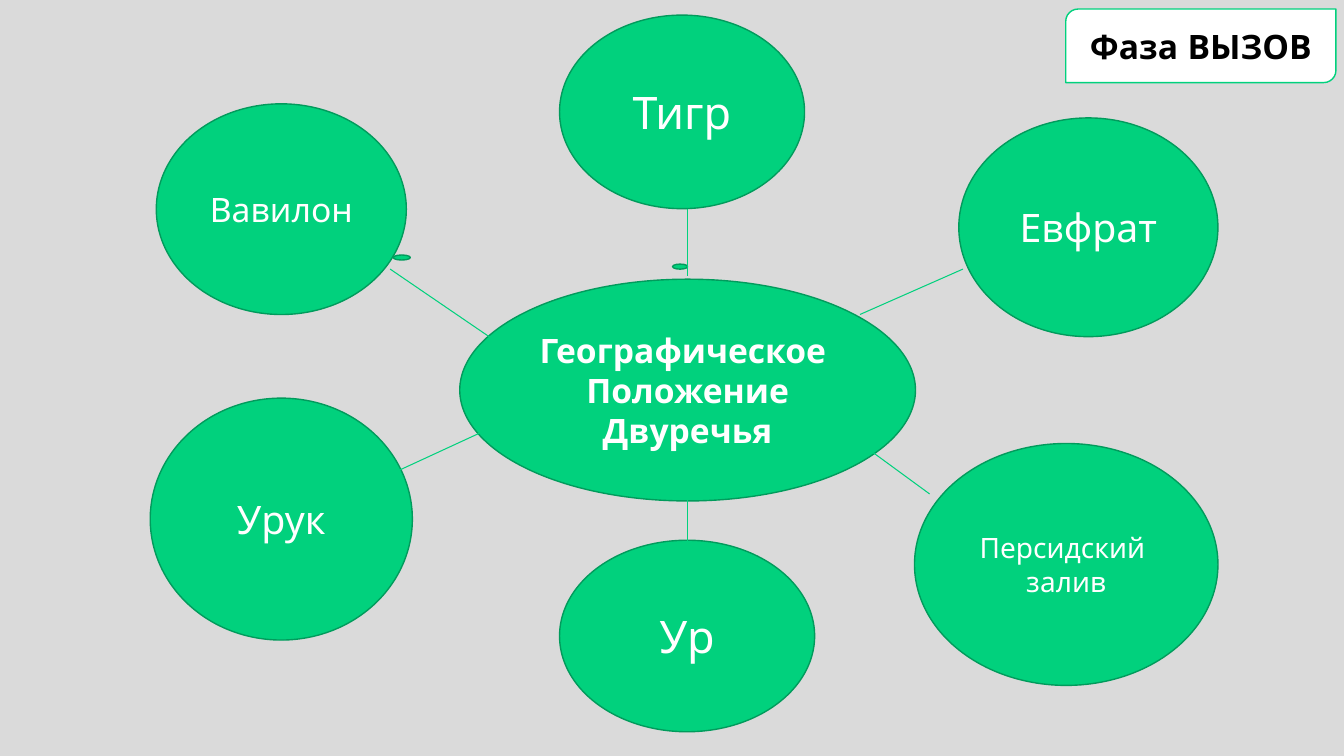
from dataclasses import dataclass

from lxml import etree
from pptx import Presentation
from pptx import util as u
from pptx.dml.color import RGBColor
from pptx.enum import shapes, text
from pptx.oxml.ns import qn


@dataclass(frozen=True)
class Theme:
    font: str = "Quicksand"
    back: str = "DADADA"
    green: str = "01D17D"
    edge: str = "019B5C"
    white: str = "FFFFFF"
    black: str = "000000"
    huge: int = 32
    large: int = 28
    medium: int = 24
    small: int = 20
    outline: float = 1
    link: float = 0.75


def rgb(value):
    return RGBColor.from_string(value)


def write(tf, content, *, font, size, color, bold=False):
    """Fill a text frame with centred text, one paragraph per line."""
    tf.word_wrap = True
    tf.vertical_anchor = text.MSO_ANCHOR.MIDDLE
    for i, line in enumerate(content.split("\n")):
        p = tf.add_paragraph() if i else tf.paragraphs[0]
        p.alignment = text.PP_ALIGN.CENTER
        r = p.add_run()
        r.text = line
        r.font.name = font
        r.font.size = u.Pt(size)
        r.font.bold = bold
        r.font.color.rgb = rgb(color)


class Deck:
    def __init__(self, theme):
        self.theme = theme
        self.prs = Presentation()
        self.prs.slide_width = u.Inches(13.33)
        self.prs.slide_height = u.Inches(7.5)
        self.s = self.prs.slides.add_slide(self.prs.slide_layouts[6])
        fill = self.s.background.fill
        fill.solid()
        fill.fore_color.rgb = rgb(theme.back)

    def shape(self, kind, box, fill, line):
        sp = self.s.shapes.add_shape(kind, *map(u.Inches, box))
        sp.shadow.inherit = False
        sp.fill.solid()
        sp.fill.fore_color.rgb = rgb(fill)
        sp.line.color.rgb = rgb(line)
        sp.line.width = u.Pt(self.theme.outline)
        return sp

    def bubble(self, box, content="", size=None, bold=False):
        t = self.theme
        sp = self.shape(shapes.MSO_SHAPE.OVAL, box, t.green, t.edge)
        if content:
            write(sp.text_frame, content, font=t.font, size=size, color=t.white, bold=bold)

    def link(self, start, end):
        ends = map(u.Inches, (*start, *end))
        c = self.s.shapes.add_connector(shapes.MSO_CONNECTOR.STRAIGHT, *ends)
        c.line.color.rgb = rgb(self.theme.green)
        c.line.width = u.Pt(self.theme.link)
        etree.SubElement(c._element.spPr, qn("a:effectLst"))

    def tag(self, box, content):
        t = self.theme
        kind = shapes.MSO_SHAPE.ROUND_2_DIAG_RECTANGLE
        sp = self.shape(kind, box, t.white, t.green)
        write(sp.text_frame, content, font=t.font, size=t.medium, color=t.black, bold=True)


def main():
    t = Theme()
    deck = Deck(t)

    # Central topic
    deck.bubble((4.56, 2.77, 4.52, 2.2), "Географическое \nПоложение Двуречья",
                t.medium, bold=True)

    # Surrounding places
    places = [
        ((5.55, 0.15, 2.43, 1.92), "Тигр", t.huge),
        ((5.55, 5.36, 2.53, 1.9), "Ур", t.huge),
        ((9.51, 1.17, 2.57, 2.17), "Евфрат", t.large),
        ((9.07, 4.4, 3.01, 2.4), "Персидский \nзалив", t.small),
        ((1.55, 1.03, 2.48, 2.09), "Вавилон", t.medium),
        ((1.49, 3.95, 2.6, 2.4), "Урук", t.large),
    ]
    for box, name, size in places:
        deck.bubble(box, name, size)

    # Small dots beside the links
    for dot in [(6.67, 2.62, 0.15, 0.05), (3.9, 2.53, 0.17, 0.05)]:
        deck.bubble(dot)

    # Links from the topic to the places
    links = [
        ((8.53, 3.12), (9.55, 2.67)),
        ((8.4, 4.3), (9.22, 4.9)),
        ((6.82, 2.07), (6.82, 2.74)),
        ((6.82, 4.73), (6.82, 5.8)),
        ((4.75, 4.3), (3.45, 4.9)),
        ((3.87, 2.67), (5.1, 3.51)),
    ]
    for start, end in links:
        deck.link(start, end)

    # Phase tag
    deck.tag((10.57, 0.09, 2.68, 0.73), "Фаза ВЫЗОВ")

    deck.prs.save("out.pptx")


if __name__ == "__main__":
    main()
